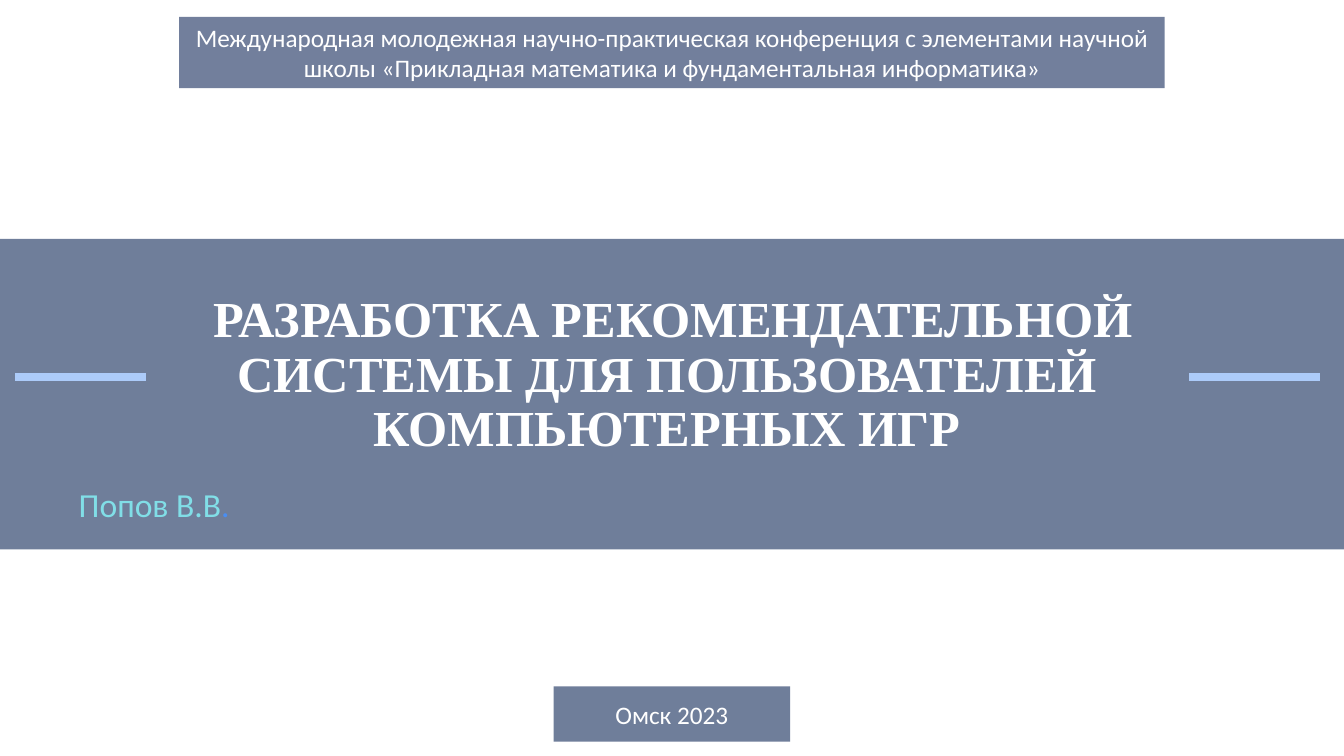
import pptx
import pptx.util
import pptx.dml.color
import pptx.enum.shapes
import pptx.enum.text
import pptx.oxml
import pptx.oxml.ns

Pt = pptx.util.Pt
ALIGN = pptx.enum.text.PP_ALIGN
ANCHOR = pptx.enum.text.MSO_ANCHOR
SLATE = "607090"
WHITE = "FFFFFF"


def rgb(value):
    return pptx.dml.color.RGBColor.from_string(value)


def format_run(r, font, size, color, bold=False):
    r.font.name = font
    r.font.size = Pt(size)
    r.font.bold = bold
    r.font.color.rgb = rgb(color)


def place(sp, x, y, w, h):
    sp.left, sp.top, sp.width, sp.height = Pt(x), Pt(y), Pt(w), Pt(h)


def add_panel(s, x, y, w, h, color, text=""):
    """Add a 90 % opaque rectangle, with centred white text if given."""
    sp = s.shapes.add_shape(pptx.enum.shapes.MSO_SHAPE.RECTANGLE,
                            Pt(x), Pt(y), Pt(w), Pt(h))
    sp.shadow.inherit = False
    sp.line.fill.background()
    sp.fill.solid()
    sp.fill.fore_color.rgb = rgb(color)
    srgb = sp.element.spPr.find(".//" + pptx.oxml.ns.qn("a:srgbClr"))
    srgb.append(pptx.oxml.parse_xml(
        f'<a:alpha {pptx.oxml.ns.nsdecls("a")} val="90000"/>'))
    if text:
        tf = sp.text_frame
        tf.text = text
        tf.word_wrap = True
        tf.vertical_anchor = ANCHOR.MIDDLE
        p = tf.paragraphs[0]
        p.alignment = ALIGN.CENTER
        format_run(p.runs[0], "Calibri", 18, WHITE)
    return sp


def add_dash(s, x, y, w):
    line = s.shapes.add_connector(pptx.enum.shapes.MSO_CONNECTOR.STRAIGHT,
                                  Pt(x), Pt(y), Pt(x + w), Pt(y))
    line.line.color.rgb = rgb("ACCBF9")
    line.line.width = Pt(5.25)
    line.element.spPr.append(pptx.oxml.parse_xml(
        f'<a:effectLst {pptx.oxml.ns.nsdecls("a")}/>'))


def fill_title(sp, x, y, w, h):
    place(sp, x, y, w, h)
    tf = sp.text_frame
    tf.text = " РАЗРАБОТКА РЕКОМЕНДАТЕЛЬНОЙ СИСТЕМЫ ДЛЯ ПОЛЬЗОВАТЕЛЕЙ КОМПЬЮТЕРНЫХ ИГР"
    tf.word_wrap = True
    tf.auto_size = pptx.enum.text.MSO_AUTO_SIZE.NONE
    tf.vertical_anchor = ANCHOR.BOTTOM
    p = tf.paragraphs[0]
    p.alignment = ALIGN.CENTER
    p.line_spacing = 0.9
    format_run(p.runs[0], "Times New Roman", 36, WHITE, bold=True)


def fill_author(sp, x, y, w, h):
    place(sp, x, y, w, h)
    tf = sp.text_frame
    tf.word_wrap = True
    tf.auto_size = pptx.enum.text.MSO_AUTO_SIZE.NONE
    tf.vertical_anchor = ANCHOR.TOP
    p = tf.paragraphs[0]
    p.alignment = ALIGN.LEFT
    p.space_before = Pt(0)
    for text, color in (("Попов В.В", "81DEE7"), (".", "4A8EF2")):
        r = p.add_run()
        r.text = text
        format_run(r, "Calibri", 24, color)


def add_title_band(s, x, y, w, h):
    """Add the band behind the title and author, with a dash at each side."""
    band = add_panel(s, x, y, w, h, SLATE)
    s.shapes.element.insert_element_before(band.element, "p:sp")
    fill_title(s.shapes.title, x + 116.6, y + 7.2, 720, 152.6)
    fill_author(s.placeholders[1], x + 49, y + 171.4, 437.8, 36)
    for dash_x in (10.8, 849.6):
        add_dash(s, x + dash_x, y + 98.6, 93.6)


def build_title_slide(prs):
    s = prs.slides.add_slide(prs.slide_layouts[0])
    add_title_band(s, 0, 170.6, 960, 221.8)
    add_panel(s, 128, 12, 704, 51, "637292",
              "Международная молодежная научно-практическая конференция "
              "с элементами научной школы «Прикладная математика "
              "и фундаментальная информатика»")
    add_panel(s, 395.4, 490.2, 169, 39.6, SLATE, "Омск 2023")


def main():
    prs = pptx.Presentation()
    prs.slide_width, prs.slide_height = Pt(960), Pt(540)
    build_title_slide(prs)
    prs.save("out.pptx")


if __name__ == "__main__":
    main()
